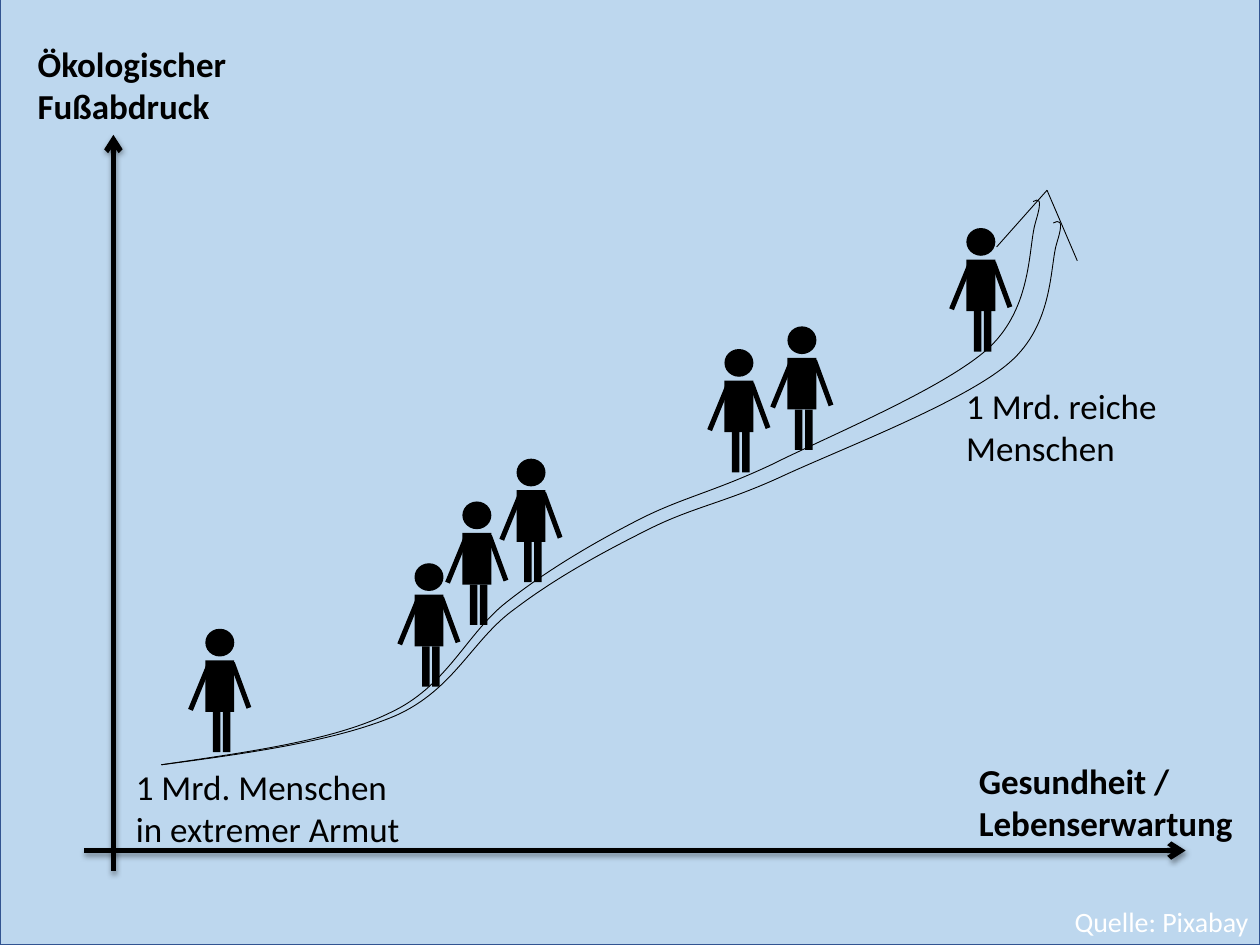
from dataclasses import dataclass

from lxml.etree import SubElement
from pptx import Presentation
from pptx.dml.color import RGBColor
from pptx.enum.shapes import MSO_CONNECTOR as CONN, MSO_SHAPE as SHAPE
from pptx.enum.text import MSO_AUTO_SIZE as AUTO
from pptx.oxml.ns import qn
from pptx.util import Inches, Pt


@dataclass(frozen=True)
class Theme:
    font: str = "Calibri"
    ink: str = "000000"
    paper: str = "BDD7EE"
    frame: str = "325491"
    light: str = "FFFFFF"
    label: int = 20
    credit: int = 16
    axis: float = 3
    thin: float = 0.5


PERSON = [
    (SHAPE.OVAL, 0, 0, 0.23, 0.22, 0),
    (SHAPE.RECTANGLE, 0, 0.25, 0.23, 0.41, 0),
    (SHAPE.RECTANGLE, 0.06, 0.66, 0.06, 0.32, 0),
    (SHAPE.RECTANGLE, 0.14, 0.66, 0.06, 0.32, 0),
    (SHAPE.RECTANGLE, -0.06, 0.25, 0.04, 0.41, 22.3),
    (SHAPE.RECTANGLE, 0.26, 0.26, 0.04, 0.38, 339.8),
]
PEOPLE = [(1.63, 4.99), (3.29, 4.47), (3.67, 3.98), (4.1, 3.64),
          (5.75, 2.77), (6.25, 2.59), (7.67, 1.81)]

UPPER_CURVE = [
    (1.28, 6.07), (1.96, 5.97), (2.64, 5.88), (3.09, 5.66),
    (3.55, 5.45), (3.7, 5.03), (4.02, 4.78),
    (4.35, 4.52), (4.71, 4.31), (5.06, 4.13),
    (5.41, 3.95), (5.65, 3.91), (6.12, 3.69),
    (6.58, 3.46), (7.5, 3.08), (7.85, 2.76),
    (8.2, 2.43), (8.16, 1.95), (8.22, 1.76),
    (8.28, 1.56), (8.24, 1.58), (8.2, 1.6),
]
LOWER_CURVE = [
    (1.28, 6.07), (1.97, 5.98), (2.67, 5.88), (3.14, 5.68),
    (3.61, 5.47), (3.75, 5.07), (4.09, 4.83),
    (4.42, 4.58), (4.79, 4.38), (5.15, 4.2),
    (5.51, 4.02), (5.76, 3.99), (6.23, 3.77),
    (6.71, 3.55), (7.65, 3.19), (8.01, 2.88),
    (8.37, 2.57), (8.33, 2.1), (8.39, 1.92),
    (8.45, 1.73), (8.4, 1.75), (8.36, 1.77),
]


class SlideBuilder:
    def __init__(self, slide, theme):
        self.slide = slide
        self.theme = theme

    def group(self):
        return self.slide.shapes.add_group_shape().shapes

    def stroke(self, line, width, color):
        line.width = Pt(width)
        line.color.rgb = RGBColor.from_string(color)

    def solid(self, sp, color):
        sp.shadow.inherit = False
        sp.fill.solid()
        sp.fill.fore_color.rgb = RGBColor.from_string(color)

    def background(self):
        sp = self.slide.shapes.add_shape(
            SHAPE.RECTANGLE, 0, Inches(-0.03), Inches(10), Inches(7.53))
        self.solid(sp, self.theme.paper)
        self.stroke(sp.line, 1, self.theme.frame)

    def line(self, start, end, width, shapes=None):
        ends = (Inches(v) for v in (*start, *end))
        sp = (shapes or self.slide.shapes).add_connector(CONN.STRAIGHT, *ends)
        self.stroke(sp.line, width, self.theme.ink)
        effects = SubElement(sp.element.spPr, qn("a:effectLst"))
        return sp, effects

    def axis(self, start, end, shapes=None):
        sp, effects = self.line(start, end, self.theme.axis, shapes)
        SubElement(sp.element.spPr.find(qn("a:ln")), qn("a:tailEnd"), type="arrow")
        shadow = SubElement(effects, qn("a:outerShdw"), blurRad=str(Pt(3.1)),
                            dist=str(Pt(1.6)), dir="5400000", rotWithShape="0")
        color = SubElement(shadow, qn("a:srgbClr"), val=self.theme.ink)
        SubElement(color, qn("a:alpha"), val="38000")

    def curve(self, knots):
        points = [(Inches(x), Inches(y)) for x, y in knots]
        builder = self.slide.shapes.build_freeform(*points[0])
        builder.add_line_segments(points[3::3], close=False)
        sp = builder.convert_to_shape()
        segments = list(sp.element.spPr.iter(qn("a:lnTo")))
        for i, segment in enumerate(segments):
            segment.tag = qn("a:cubicBezTo")
            controls = points[3 * i + 1:3 * i + 3]
            for k, (x, y) in enumerate(controls):
                pt = SubElement(segment, qn("a:pt"), x=str(x - sp.left), y=str(y - sp.top))
                segment.insert(k, pt)
        sp.shadow.inherit = False
        sp.fill.background()
        self.stroke(sp.line, self.theme.thin, self.theme.ink)

    def person(self, x, y):
        shapes = self.group()
        for kind, dx, dy, w, h, angle in PERSON:
            sp = shapes.add_shape(
                kind, Inches(x + dx), Inches(y + dy), Inches(w), Inches(h))
            sp.rotation = angle
            self.solid(sp, self.theme.ink)
            sp.line.fill.background()

    def text(self, x, y, w, h, lines, size=None, color=None, bold=False,
             wrap=True, shapes=None):
        sp = (shapes or self.slide.shapes).add_textbox(
            Inches(x), Inches(y), Inches(w), Inches(h))
        tf = sp.text_frame
        tf.word_wrap = wrap
        tf.auto_size = AUTO.SHAPE_TO_FIT_TEXT
        for i, line in enumerate(lines):
            p = tf.add_paragraph() if i else tf.paragraphs[0]
            r = p.add_run()
            r.text = line
            r.font.name = self.theme.font
            r.font.size = Pt(size or self.theme.label)
            r.font.bold = bold
            r.font.color.rgb = RGBColor.from_string(color or self.theme.ink)


def main():
    prs = Presentation()
    prs.slide_width, prs.slide_height = Inches(10), Inches(7.5)
    theme = Theme()
    s = SlideBuilder(prs.slides.add_slide(prs.slide_layouts[6]), theme)

    s.background()
    s.axis((0.67, 6.75), (9.41, 6.75))
    s.text(7.67, 5.98, 2.33, 0.77, ["Gesundheit /", "Lebenserwartung"], bold=True)
    for knots in (UPPER_CURVE, LOWER_CURVE):
        s.curve(knots)
    for start in ((7.91, 1.96), (8.55, 2.07)):
        s.line(start, (8.31, 1.51), theme.thin)
    s.text(0.98, 6.03, 2.3, 0.77, ["1 Mrd. Menschen in extremer Armut"])
    for x, y in PEOPLE:
        s.person(x, y)
    s.text(7.57, 3, 2.3, 0.77, ["1 Mrd. reiche Menschen"])
    vertical = s.group()
    s.axis((0.9, 6.91), (0.9, 1.07), vertical)
    s.text(0.2, 0.29, 1.89, 0.77, ["Ökologischer Fußabdruck"], bold=True, shapes=vertical)
    s.text(8.43, 7.13, 1.59, 0.37, ["Quelle: Pixabay"],
           size=theme.credit, color=theme.light, wrap=False)
    prs.save("out.pptx")


if __name__ == "__main__":
    main()
